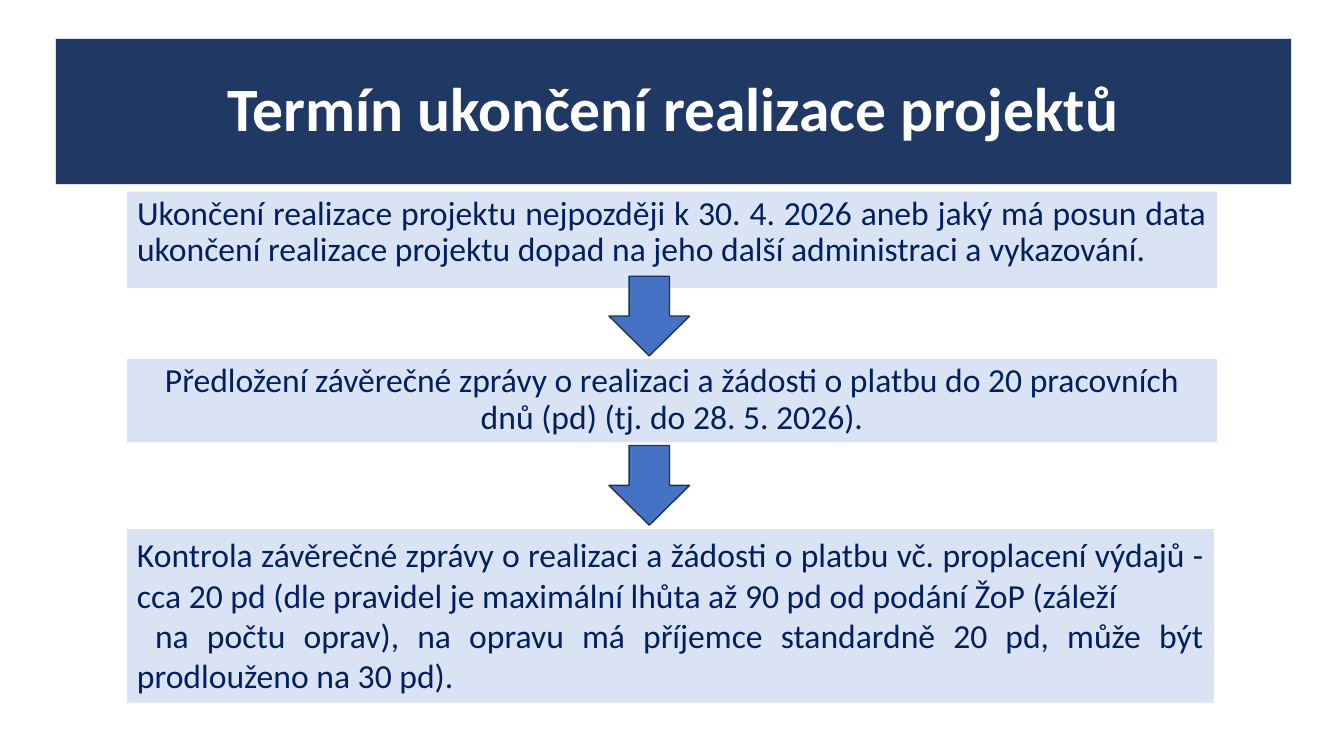
"""Build the slide on the closing date of project realisation."""
from pptx import Presentation
from pptx.dml.color import RGBColor
from pptx.enum.shapes import MSO_SHAPE as Preset
from pptx.enum.text import MSO_ANCHOR as Anchor, MSO_AUTO_SIZE as AutoSize, PP_ALIGN as Align
from pptx.util import Inches, Pt

TITLE = "Termín ukončení realizace projektů"
DEADLINE = ["Ukončení realizace projektu nejpozději k 30. 4. 2026 aneb jaký má posun data "
            "ukončení realizace projektu dopad na jeho další administraci a vykazování."]
REPORT = ["Předložení závěrečné zprávy o realizaci a žádosti o platbu do 20 pracovních "
          "dnů (pd) (tj. do 28. 5. 2026)."]
REVIEW = ["Kontrola závěrečné zprávy o realizaci a žádosti o platbu vč. proplacení výdajů - "
          "cca 20 pd (dle pravidel je maximální lhůta až 90 pd od podání ŽoP (záleží",
          "na počtu oprav), na opravu má příjemce standardně 20 pd, může být "
          "prodlouženo na 30 pd)."]

NAVY = RGBColor(0x20, 0x38, 0x64)
PALE = RGBColor(0xDA, 0xE3, 0xF3)
INK = RGBColor(0x00, 0x20, 0x60)
WHITE = RGBColor(0xFF, 0xFF, 0xFF)
BLUE = RGBColor(0x44, 0x72, 0xC4)
EDGE = RGBColor(0x1E, 0x32, 0x56)

STEP_LEFT, STEP_WIDTH = 1.26, 10.81
STEPS = [
    (DEADLINE, 1.9, STEP_WIDTH, 0.96, dict(align=Align.JUSTIFY, spacing=0.9, before=10)),
    (REPORT, 3.56, STEP_WIDTH, 0.83, dict(align=Align.CENTER, spacing=0.9, before=10)),
    (REVIEW, 5.25, STEP_WIDTH - 0.03, 1.72, dict(align=Align.JUSTIFY, later_indent=0.18)),
]
ARROW_LEFT, ARROW_WIDTH, ARROW_HEIGHT = 6.04, 0.8, 0.79
ARROW_TOPS = [2.74, 4.42]


def place(part, left, top, width, height, fill, line=None, weight=1):
    part.left, part.top = Inches(left), Inches(top)
    part.width, part.height = Inches(width), Inches(height)
    part.fill.solid()
    part.fill.fore_color.rgb = fill
    if line is None:
        part.line.fill.background()
    else:
        part.line.color.rgb = line
        part.line.width = Pt(weight)


def write(part, paragraphs, size=24, color=INK, bold=False, align=Align.LEFT,
          spacing=1.0, before=0, anchor=Anchor.TOP, later_indent=0):
    frame = part.text_frame
    frame.word_wrap = True
    frame.auto_size = AutoSize.NONE
    frame.vertical_anchor = anchor
    frame.text = "\n".join(paragraphs)
    for number, paragraph in enumerate(frame.paragraphs):
        paragraph.alignment = align
        paragraph.line_spacing = spacing
        paragraph.space_before = Pt(before)
        properties = paragraph._p.get_or_add_pPr()
        properties.set("marL", "0")
        properties.set("indent", str(Inches(later_indent if number else 0)))
        properties.append(properties.makeelement(
            "{http://schemas.openxmlformats.org/drawingml/2006/main}buNone", {}))
        font = paragraph.runs[0].font
        font.name, font.size, font.bold = "Calibri", Pt(size), bold
        font.color.rgb = color


def main():
    deck = Presentation()
    deck.slide_width, deck.slide_height = Inches(13.33), Inches(7.5)
    slide = deck.slides.add_slide(deck.slide_layouts[1])
    shapes = slide.shapes

    heading = shapes.title
    place(heading, 0.55, 0.38, 12.26, 1.45, NAVY, PALE, 0.75)
    write(heading, [TITLE], size=44, color=WHITE, bold=True, align=Align.CENTER,
          spacing=0.9, anchor=Anchor.MIDDLE)

    for number, (words, top, width, height, style) in enumerate(STEPS):
        if number:
            step = shapes.add_shape(Preset.RECTANGLE, 0, 0, 0, 0)
            step.shadow.inherit = False
        else:
            step = slide.placeholders[1]
        place(step, STEP_LEFT, top, width, height, PALE)
        write(step, words, **style)

    for top in ARROW_TOPS:
        arrow = shapes.add_shape(Preset.DOWN_ARROW, 0, 0, 0, 0)
        arrow.shadow.inherit = False
        place(arrow, ARROW_LEFT, top, ARROW_WIDTH, ARROW_HEIGHT, BLUE, EDGE)

    deck.save("out.pptx")


if __name__ == "__main__":
    main()
